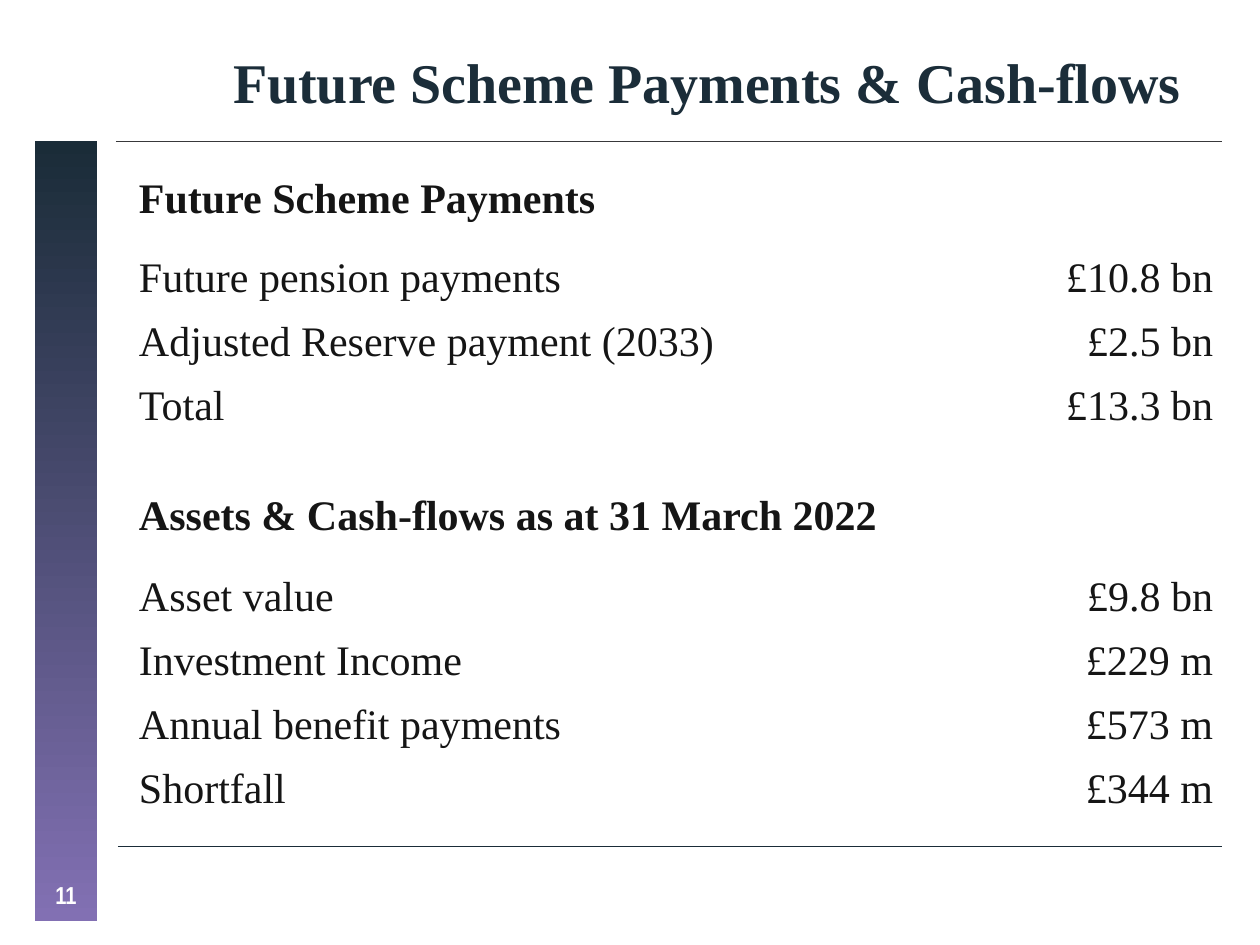
from dataclasses import dataclass

from lxml.etree import SubElement
from pptx import Presentation
from pptx.dml.color import RGBColor
from pptx.enum.shapes import MSO_CONNECTOR as Connector, MSO_SHAPE as Shape
from pptx.enum.text import MSO_ANCHOR as Anchor, MSO_AUTO_SIZE as AutoSize, PP_ALIGN as Align
from pptx.oxml.ns import qn
from pptx.util import Inches, Pt

PIXEL = Inches(1) / 126


@dataclass(frozen=True)
class Theme:
    """Colours, fonts and type sizes of the slide."""
    dark: str = "1A2C38"
    violet: str = "8270B3"
    title: str = "1B2D39"
    text: str = "151515"
    rule: str = "38383A"
    white: str = "FFFFFF"
    serif: str = "Times New Roman"
    narrow: str = "Arial Narrow"
    title_size: int = 32
    body_size: int = 24
    number_size: int = 14
    rule_width: float = 0.5


THEME = Theme()

PAYMENTS = [
    ("Future pension payments", "£10.8 bn"),
    ("Adjusted Reserve payment (2033)", "£2.5 bn"),
    ("Total", "£13.3 bn"),
]
ASSETS = [
    ("Asset value", "£9.8 bn"),
    ("Investment Income", "£229 m"),
    ("Annual benefit payments", "£573 m"),
    ("Shortfall", "£344 m"),
]


def px(*lengths):
    """Turn pixel lengths into EMU."""
    return [round(length * PIXEL) for length in lengths]


def set_margins(holder, horizontal, top, bottom):
    """Set the inner margins of a text frame or table cell."""
    holder.margin_left = holder.margin_right = px(horizontal)[0]
    holder.margin_top, holder.margin_bottom = px(top, bottom)


def write(text_frame, text, font_name, size, color, bold=False, align=Align.LEFT):
    """Write one formatted paragraph."""
    text_frame.text = text
    paragraph = text_frame.paragraphs[0]
    paragraph.alignment = align
    font = paragraph.font
    font.name, font.size, font.bold = font_name, Pt(size), bold
    font.color.rgb = RGBColor.from_string(color)


def add_rule(slide, left, right, y, color):
    """Draw a thin horizontal rule."""
    rule = slide.shapes.add_connector(Connector.STRAIGHT, *px(left, y, right, y))
    rule.line.color.rgb = RGBColor.from_string(color)
    rule.line.width = Pt(THEME.rule_width)
    SubElement(rule._element.spPr, qn("a:effectLst"))


def add_side_bar(slide):
    """Draw the gradient bar on the left."""
    bar = slide.shapes.add_shape(Shape.RECTANGLE, *px(35, 141, 62, 780))
    bar.shadow.inherit = False
    bar.line.fill.background()
    bar.fill.gradient()
    bar.fill.gradient_angle = 270
    for stop, color in zip(bar.fill.gradient_stops, (THEME.dark, THEME.violet)):
        stop.color.rgb = RGBColor.from_string(color)


def set_title(slide, text):
    """Place and format the title."""
    title = slide.shapes.title
    title.left, title.top, title.width, title.height = px(233, 26, 989, 111)
    frame = title.text_frame
    frame.auto_size = AutoSize.NONE
    frame.vertical_anchor = Anchor.MIDDLE
    set_margins(frame, 0, 0, 0)
    write(frame, text, THEME.serif, THEME.title_size, THEME.title, bold=True)


def add_figures_table(slide):
    """Add the two groups of figures under their headings."""
    rows = [
        ("Future Scheme Payments", "", 79, 0),
        *((label, value, 64, 0) for label, value in PAYMENTS),
        ("Assets & Cash-flows as at 31 March 2022", "", 127, 46),
        *((label, value, 64, 0) for label, value in ASSETS),
    ]
    height = sum(row[2] for row in rows)
    table = slide.shapes.add_table(len(rows), 2, *px(130, 176, 1092, height)).table
    table.first_row = table.horz_banding = False
    for column, width in zip(table.columns, px(848, 244)):
        column.width = width
    for row, (label, value, row_height, top) in zip(table.rows, rows):
        row.height = px(row_height)[0]
        for cell, text, align in zip(row.cells, (label, value), (Align.LEFT, Align.RIGHT)):
            cell.fill.background()
            set_margins(cell, 9, top, 0)
            write(cell.text_frame, text, THEME.serif, THEME.body_size, THEME.text,
                  bold=not value, align=align)


def add_page_number(slide, number):
    """Write the page number at the foot of the bar."""
    frame = slide.shapes.add_textbox(*px(37, 873, 58, 44)).text_frame
    frame.word_wrap = True
    frame.vertical_anchor = Anchor.MIDDLE
    set_margins(frame, 11, 5, 5)
    write(frame, number, THEME.narrow, THEME.number_size, THEME.white,
          bold=True, align=Align.CENTER)


def main():
    """Build and save the slide."""
    presentation = Presentation()
    presentation.slide_width, presentation.slide_height = px(1260, 945)
    slide = presentation.slides.add_slide(presentation.slide_layouts.get_by_name("Title Only"))
    add_rule(slide, 116, 1222, 141, THEME.rule)
    add_rule(slide, 118, 1222, 846, THEME.dark)
    add_side_bar(slide)
    set_title(slide, "Future Scheme Payments & Cash-flows")
    add_figures_table(slide)
    add_page_number(slide, "11")
    presentation.save("out.pptx")


if __name__ == "__main__":
    main()
